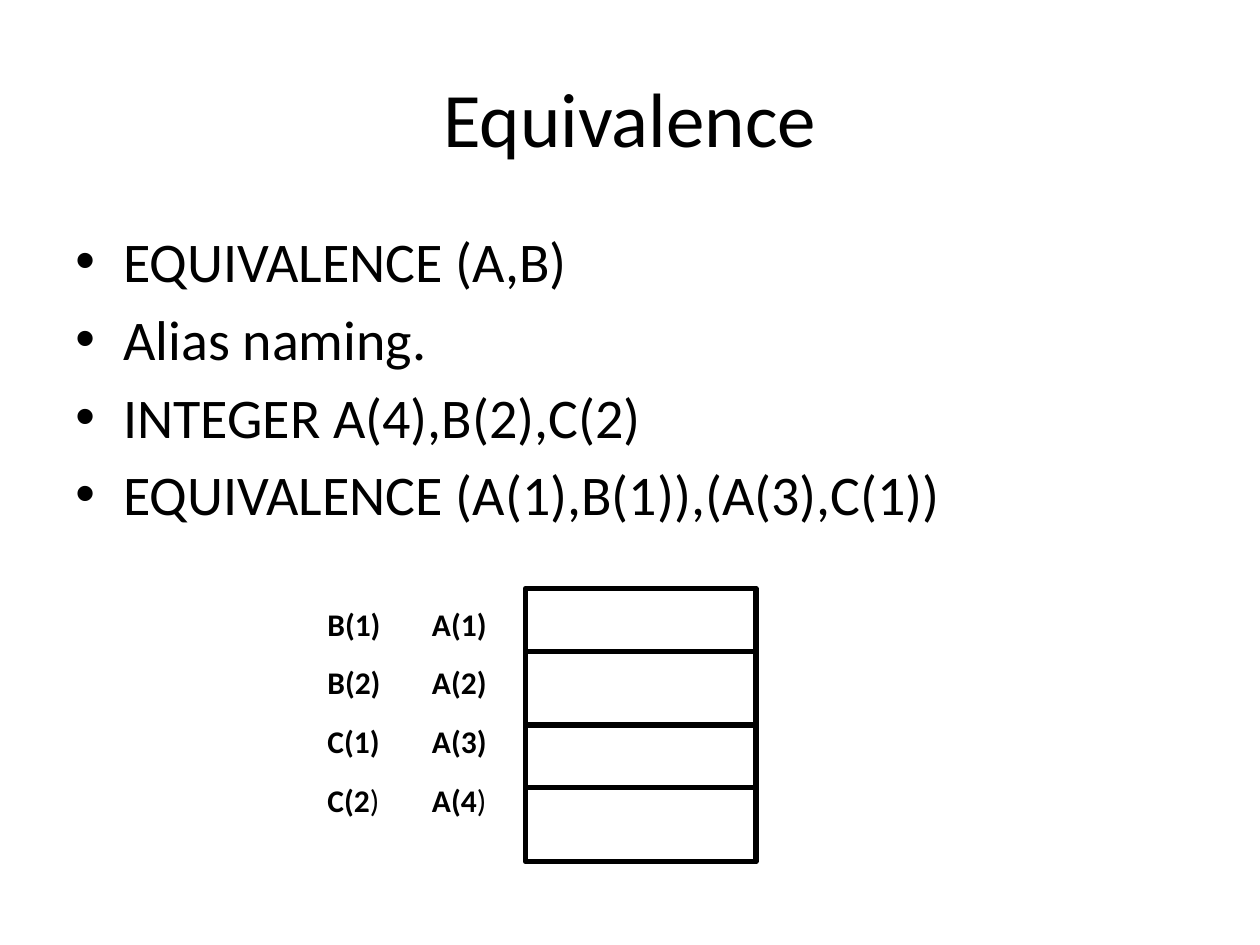
from lxml import etree
from pptx import Presentation
from pptx import util as u
from pptx.dml.color import RGBColor
from pptx.enum import shapes, text
from pptx.oxml.ns import qn

BLACK = RGBColor(0, 0, 0)
FONT = "Calibri"
LINE_WIDTH = u.Pt(3)
STATEMENTS = [
    "EQUIVALENCE (A,B)",
    "Alias naming.",
    "INTEGER A(4),B(2),C(2)",
    "EQUIVALENCE (A(1),B(1)),(A(3),C(1))",
]
LABEL_COLUMNS = [
    (3.33, ["A(1)", "A(2)", "A(3)", "A(4)"]),
    (2.5, ["B(1)", "B(2)", "C(1)", "C(2)"]),
]
MEMORY_LEFT, MEMORY_TOP, MEMORY_WIDTH, MEMORY_HEIGHT = 4.17, 4.67, 1.83, 2.17


def add_bullet(para):
    properties = para._p.get_or_add_pPr()
    properties.set("marL", str(u.Inches(0.38)))
    properties.set("indent", str(-u.Inches(0.38)))
    etree.SubElement(properties, qn("a:buFont"), typeface="Arial")
    etree.SubElement(properties, qn("a:buChar"), char="•")


def add_text(page, left, top, width, height, lines, size, gap=0, bold=False, bullets=False):
    box = page.shapes.add_textbox(
        u.Inches(left), u.Inches(top), u.Inches(width), u.Inches(height)
    )
    frame = box.text_frame
    frame.text = "\n".join(lines)
    frame.word_wrap = True
    for index, para in enumerate(frame.paragraphs):
        if bullets:
            add_bullet(para)
        if index:
            para.space_before = u.Pt(gap)
        for span in para.runs:
            style_span(span, size, bold)
    return frame


def style_span(span, size, bold):
    span.font.name = FONT
    span.font.size = u.Pt(size)
    span.font.bold = bold
    span.font.color.rgb = BLACK


def add_title(page, title):
    frame = add_text(page, 0.5, 0.3, 9, 1.25, [title], 44)
    frame.vertical_anchor = text.MSO_ANCHOR.MIDDLE
    frame.paragraphs[0].alignment = text.PP_ALIGN.CENTER


def add_labels(page, left, labels):
    frame = add_text(page, left, 4.75, 1.25, 1.93, labels, 18, gap=12, bold=True)
    last = frame.paragraphs[-1]
    last.runs[0].text = labels[-1][:-1]
    closing = last.add_run()
    closing.text = labels[-1][-1]
    style_span(closing, 18, False)


def style_line(line):
    line.color.rgb = BLACK
    line.width = LINE_WIDTH


def add_memory_block(page):
    block = page.shapes.add_shape(
        shapes.MSO_SHAPE.RECTANGLE,
        u.Inches(MEMORY_LEFT),
        u.Inches(MEMORY_TOP),
        u.Inches(MEMORY_WIDTH),
        u.Inches(MEMORY_HEIGHT),
    )
    block.shadow.inherit = False
    block.fill.background()
    style_line(block.line)
    return block


def add_divider(page, y):
    divider = page.shapes.add_connector(
        shapes.MSO_CONNECTOR.STRAIGHT,
        u.Inches(MEMORY_LEFT),
        u.Inches(y),
        u.Inches(MEMORY_LEFT + MEMORY_WIDTH),
        u.Inches(y),
    )
    style_line(divider.line)
    etree.SubElement(divider._element.spPr, qn("a:effectLst"))
    return divider


def main():
    deck = Presentation()
    deck.slide_width = u.Inches(10)
    deck.slide_height = u.Inches(7.5)
    page = deck.slides.add_slide(deck.slide_layouts[6])

    add_title(page, "Equivalence")
    add_text(page, 0.5, 1.75, 9, 4.95, STATEMENTS, 32, gap=6, bullets=True)

    block = add_memory_block(page)
    middle = add_divider(page, 5.75)
    middle.begin_connect(block, 1)
    middle.end_connect(block, 3)
    for y in (5.17, 6.25):
        add_divider(page, y)

    for left, labels in LABEL_COLUMNS:
        add_labels(page, left, labels)

    deck.save("out.pptx")


if __name__ == "__main__":
    main()
